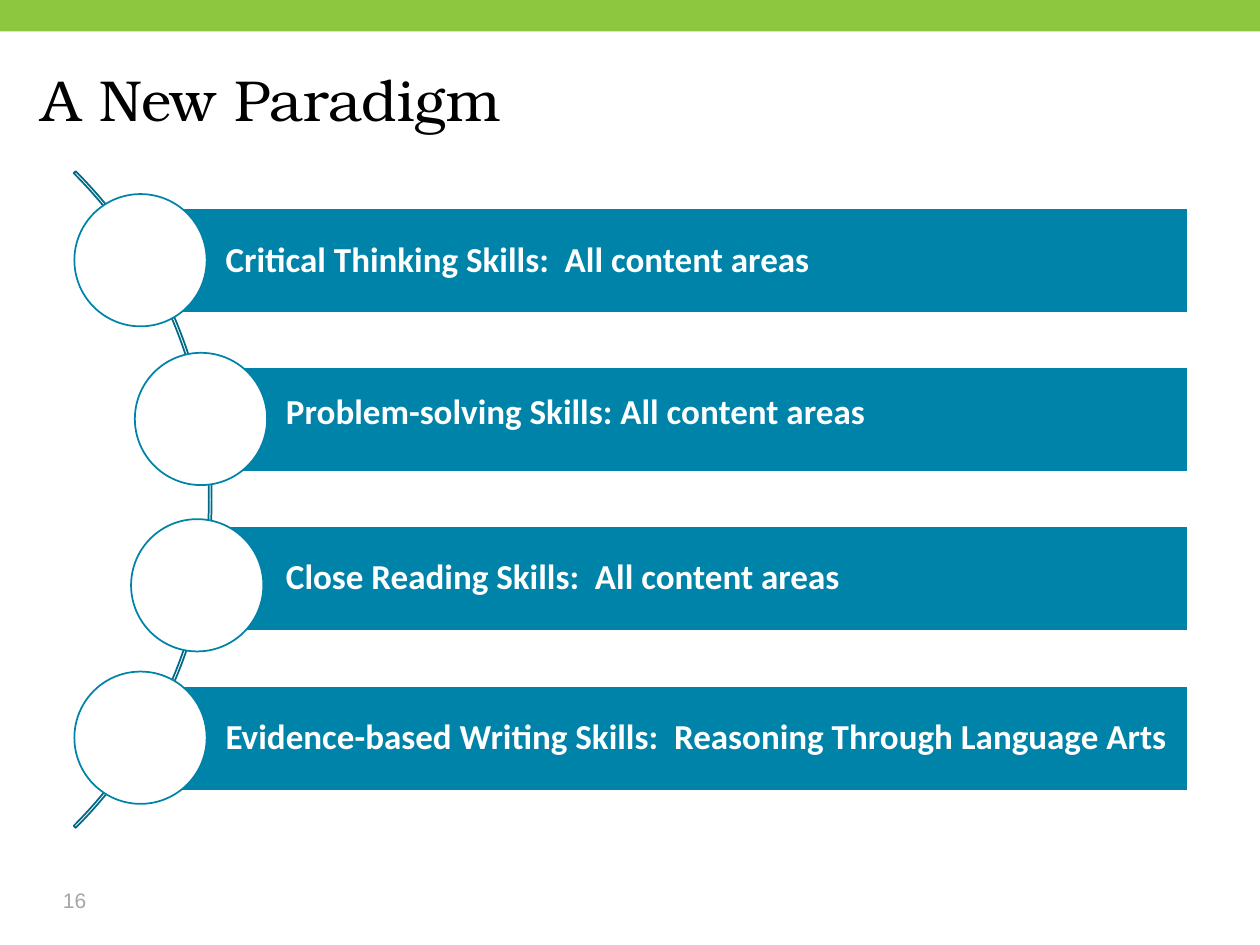
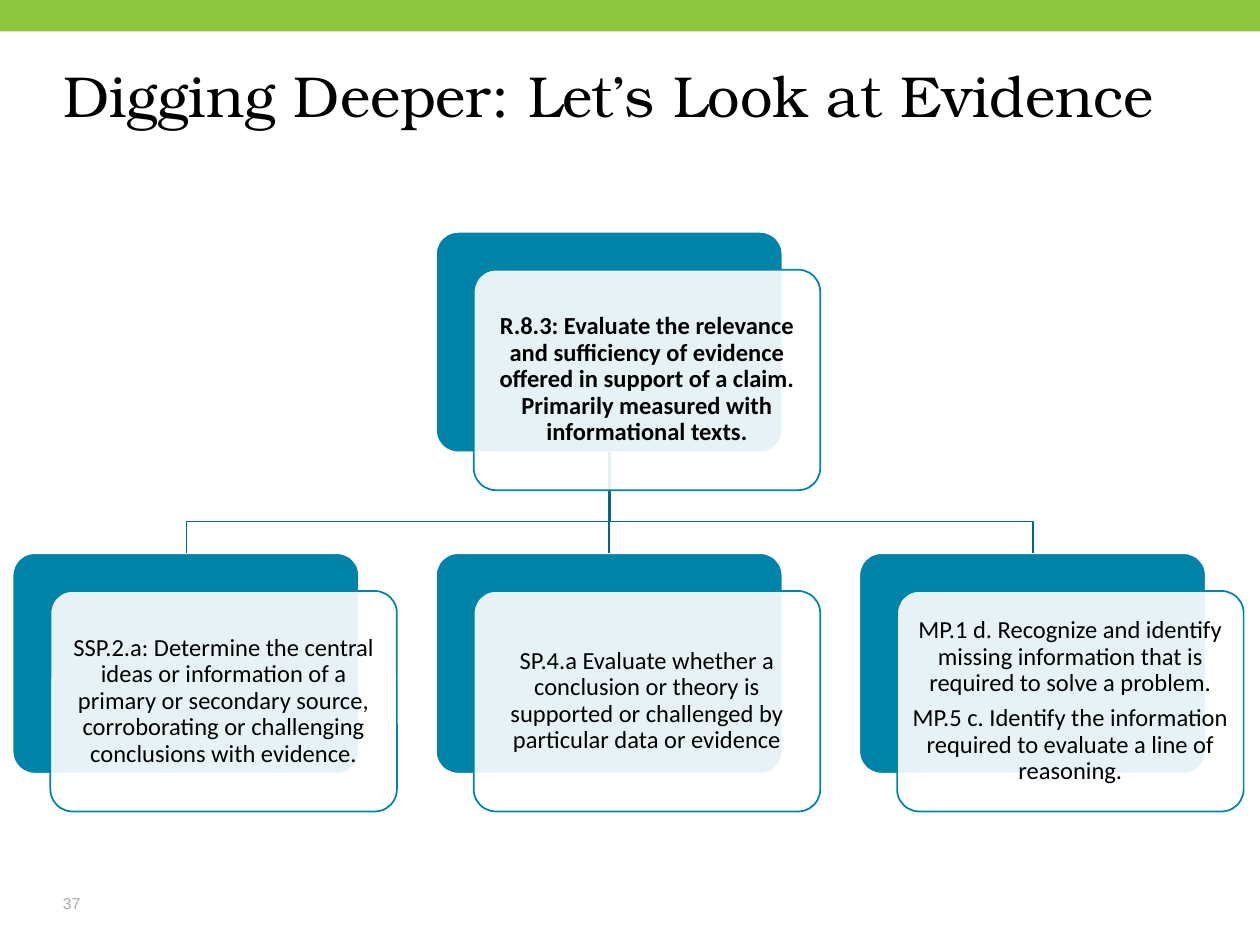
from typing import NamedTuple

from lxml import etree
from pptx import Presentation
from pptx.dml.color import RGBColor
from pptx.enum.shapes import MSO_CONNECTOR, MSO_SHAPE
from pptx.enum.text import MSO_ANCHOR, PP_ALIGN
from pptx.oxml.ns import qn
from pptx.util import Pt

PX = 9144  # EMU in one px, 100 px to the inch

GREEN = RGBColor(0x8D, 0xC6, 0x3F)
TEAL = RGBColor(0x00, 0x83, 0xA9)
DEEP = RGBColor(0x00, 0x69, 0x87)
WHITE = RGBColor(0xFF, 0xFF, 0xFF)
BLACK = RGBColor(0x00, 0x00, 0x00)
GREY = RGBColor(0xA6, 0xA6, 0xA6)
PALE = RGBColor(0xAF, 0xAB, 0xAB)

RECT, ROUND = MSO_SHAPE.RECTANGLE, MSO_SHAPE.ROUNDED_RECTANGLE
OVAL, ARC = MSO_SHAPE.OVAL, MSO_SHAPE.BLOCK_ARC
STRAIGHT = MSO_CONNECTOR.STRAIGHT
TOP, MIDDLE, BOTTOM = MSO_ANCHOR.TOP, MSO_ANCHOR.MIDDLE, MSO_ANCHOR.BOTTOM
LEFT, CENTER = PP_ALIGN.LEFT, PP_ALIGN.CENTER


class Box(NamedTuple):
    x: int
    y: int
    w: int
    h: int


class Font(NamedTuple):
    name: str
    size: int
    color: RGBColor
    bold: bool = False


class Inset(NamedTuple):
    left: int = 0
    top: int = 0
    right: int = 0
    bottom: int = 0


class Skill(NamedTuple):
    text: str
    left: int
    orb_x: int
    orb_y: int
    inset: Inset = Inset(67, 6, 6, 6)


class Card(NamedTuple):
    x: int
    y: int
    texts: tuple[str, ...]
    bold: bool = False


HEAD = Font("TeX Gyre Bonum", 33, BLACK)

# Skill bars
BAR_TOP, BAR_RIGHT, BAR_H = 165, 943, 84
ORB = 105
SKILLS = (
    Skill("Critical Thinking Skills:  All content areas", 112, 59, 154),
    Skill("Problem-solving Skills: All content areas", 160, 107, 280,
          Inset(67, 4, 4, 14)),
    Skill("Close Reading Skills:  All content areas", 160, 104, 412),
    Skill("Evidence-based Writing Skills:  Reasoning Through Language Arts",
          112, 59, 533),
)

# Evidence tree
CARD_W, CARD_H, SHIFT = 275, 175, 30
COL, COL_GAP = 10, 336
LEAF_Y, FORK_Y = 439, 414
HUB = Card(COL + COL_GAP, 184, (
    "R.8.3: Evaluate the relevance and sufficiency of evidence offered in "
    "support of a claim. Primarily measured with informational texts.",), True)
LEAVES = [Card(COL + i * COL_GAP, LEAF_Y, texts) for i, texts in enumerate((
    ("SSP.2.a: Determine the central ideas or information of a primary or "
     "secondary source, corroborating or challenging conclusions with "
     "evidence.",),
    ("SP.4.a Evaluate whether a conclusion or theory is supported or "
     "challenged by particular data or evidence",),
    ("MP.1 d. Recognize and identify missing information that is required "
     "to solve a problem.",
     "MP.5 c. Identify the information required to evaluate a line of "
     "reasoning."),
))]


def write(shape, texts: tuple[str, ...], font: Font, anchor=TOP, align=LEFT,
          inset: Inset = Inset(), pitch: float = 0.9) -> None:
    frame = shape.text_frame
    frame.word_wrap = True
    frame.vertical_anchor = anchor
    frame.margin_left, frame.margin_top = inset.left * PX, inset.top * PX
    frame.margin_right, frame.margin_bottom = inset.right * PX, inset.bottom * PX
    for i, text in enumerate(texts):
        para = frame.add_paragraph() if i else frame.paragraphs[0]
        para.alignment = align
        para.line_spacing = pitch
        if i:
            para.space_before = Pt(5)
        run = para.add_run()
        run.text = text
        run.font.name = font.name
        run.font.size = Pt(font.size)
        run.font.bold = font.bold
        run.font.color.rgb = font.color


def paint(shape, fill: RGBColor | None, line: RGBColor | None,
          width: float = 1) -> None:
    shape.shadow.inherit = False
    if fill is None:
        shape.fill.background()
    else:
        shape.fill.solid()
        shape.fill.fore_color.rgb = fill
    if line is None:
        shape.line.fill.background()
    else:
        shape.line.color.rgb = line
        shape.line.width = Pt(width)


def draw(slide, kind, box: Box, fill: RGBColor | None,
         line: RGBColor | None = None, width: float = 1):
    shape = slide.shapes.add_shape(kind, *(n * PX for n in box))
    paint(shape, fill, line, width)
    return shape


def label(slide, box: Box, text: str, font: Font, anchor=TOP,
          pitch: float = 0.9) -> None:
    area = slide.shapes.add_textbox(*(n * PX for n in box))
    write(area, (text,), font, anchor, pitch=pitch)


def start(deck, title: str, box: Box, number: str, font: Font):
    """Add a slide with the band, title and number."""
    slide = deck.slides.add_slide(deck.slide_layouts[6])
    draw(slide, RECT, Box(0, 0, 1000, 25), GREEN)
    label(slide, box, title, HEAD)
    label(slide, Box(50, 689, 50, 35), number, font, BOTTOM, 1.0)
    return slide


def skills(deck) -> None:
    slide = start(deck, "A New Paradigm", Box(33, 57, 931, 127),
                  "16", Font("Arial", 12, GREY))
    # Curve behind the bars
    arc = draw(slide, ARC, Box(-569, 28, 737, 737), None, DEEP)
    for i, value in enumerate((189, 27, 0.003)):
        arc.adjustments[i] = value
    # Bars and circles
    for i, skill in enumerate(SKILLS):
        top = BAR_TOP + i * 379 // 3
        bar = draw(slide, RECT,
                   Box(skill.left, top, BAR_RIGHT - skill.left, BAR_H),
                   TEAL, WHITE, 1.5)
        write(bar, (skill.text,), Font("Calibri", 20, WHITE, True), MIDDLE,
              inset=skill.inset)
        draw(slide, OVAL, Box(skill.orb_x, skill.orb_y, ORB, ORB), WHITE, TEAL)


def back(slide, card: Card):
    shape = draw(slide, ROUND, Box(card.x, card.y, CARD_W, CARD_H), TEAL, WHITE)
    shape.adjustments[0] = 0.1
    return shape


def front(slide, card: Card) -> None:
    shape = draw(slide, ROUND,
                 Box(card.x + SHIFT, card.y + SHIFT, CARD_W, CARD_H),
                 WHITE, TEAL)
    shape.adjustments[0] = 0.1
    color = shape.element.spPr.find(qn("a:solidFill"))[0]
    etree.SubElement(color, qn("a:alpha")).set("val", "90000")
    write(shape, card.texts, Font("Calibri", 14, BLACK, card.bold), MIDDLE,
          CENTER, Inset(6, 6, 6, 6))


def link(slide, root, leaf) -> None:
    wire = slide.shapes.add_connector(STRAIGHT, 0, 0, 0, 0)
    wire.begin_connect(root, 2)
    wire.end_connect(leaf, 0)
    wire.line.color.rgb = DEEP
    wire.line.width = Pt(1)
    etree.SubElement(wire.element.spPr, qn("a:effectLst"))


def bend(slide, leaf: Card) -> None:
    hub_x, leaf_x = HUB.x + CARD_W / 2, leaf.x + CARD_W / 2
    path = slide.shapes.build_freeform(hub_x, HUB.y + CARD_H, PX)
    path.add_line_segments(
        [(hub_x, FORK_Y), (leaf_x, FORK_Y), (leaf_x, leaf.y)], close=False)
    paint(path.convert_to_shape(), None, DEEP)


def tree(deck) -> None:
    slide = start(deck, "Digging Deeper: Let’s Look at Evidence",
                  Box(50, 54, 921, 87), "37", Font("Arial", 9, PALE))
    # Back cards, then lines, then the sheer front cards
    root, _, mid, _ = [back(slide, card) for card in (HUB, *LEAVES)]
    bend(slide, LEAVES[2])
    link(slide, root, mid)
    bend(slide, LEAVES[0])
    for card in (HUB, *LEAVES):
        front(slide, card)


def main() -> None:
    deck = Presentation()
    deck.slide_width, deck.slide_height = 1000 * PX, 750 * PX
    skills(deck)
    tree(deck)
    deck.save("out.pptx")


if __name__ == "__main__":
    main()
